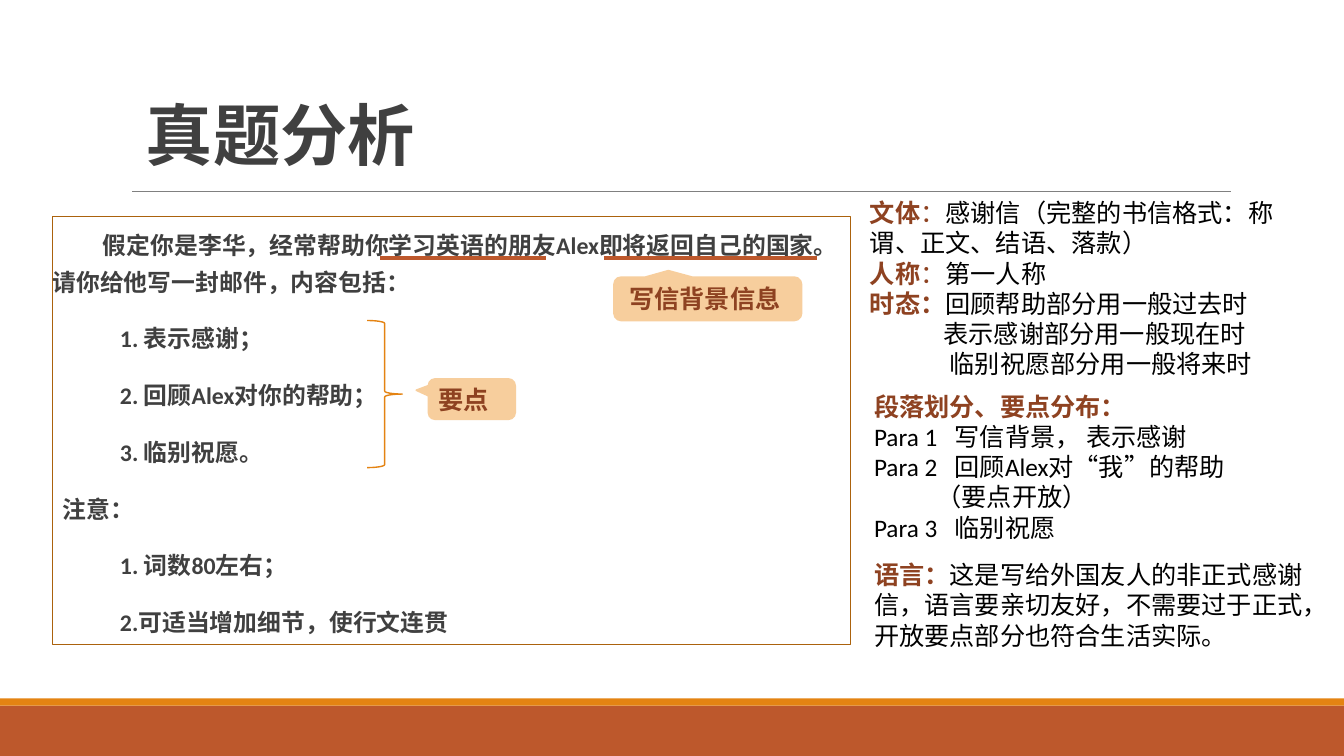
from lxml.etree import SubElement
from pptx import Presentation
from pptx.dml.color import RGBColor
from pptx.enum.shapes import MSO_CONNECTOR, MSO_SHAPE
from pptx.enum.text import MSO_ANCHOR, PP_ALIGN
from pptx.oxml.ns import qn
from pptx.util import Inches, Pt

WHITE = RGBColor(0xFF, 0xFF, 0xFF)
BLACK = RGBColor(0, 0, 0)
DARK = RGBColor(0x40, 0x40, 0x40)
GRAY = RGBColor(0x80, 0x80, 0x80)
RUST = RGBColor(0xBD, 0x58, 0x2C)
ORANGE = RGBColor(0xE4, 0x83, 0x12)
FRAME = RGBColor(0xAB, 0x62, 0x0D)
PEACH = RGBColor(0xF7, 0xCE, 0x9D)
BROWN = RGBColor(0x8E, 0x42, 0x21)

presentation = Presentation()
presentation.slide_width = Inches(13.33)
presentation.slide_height = Inches(7.5)
slide = presentation.slides.add_slide(presentation.slide_layouts[6])
slide.background.fill.solid()
slide.background.fill.fore_color.rgb = WHITE


def add_block(kind, box, fill=None, line=None, width=1):
    shape = slide.shapes.add_shape(kind, *map(Inches, box))
    shape.shadow.inherit = False
    if fill:
        shape.fill.solid()
        shape.fill.fore_color.rgb = fill
    else:
        shape.fill.background()
    if line:
        shape.line.color.rgb = line
        shape.line.width = Pt(width)
    else:
        shape.line.fill.background()
    return shape


def style(paragraph, size, color, bold):
    paragraph.alignment = PP_ALIGN.LEFT
    font = paragraph.font
    font.name, font.size, font.bold = "Calibri", Pt(size), bold
    font.color.rgb = color


add_block(MSO_SHAPE.RECTANGLE, (0, 7, 13.33, 0.5), RUST)
add_block(MSO_SHAPE.RECTANGLE, (0, 6.93, 13.33, 0.07), ORANGE)

title = slide.shapes.add_textbox(Inches(1.35), Inches(0.98), Inches(9.4), Inches(0.8))
title.text_frame.word_wrap = True
title.text_frame.vertical_anchor = MSO_ANCHOR.BOTTOM
title.text_frame.text = "真题分析"
title.text_frame.paragraphs[0].line_spacing = 0.85
style(title.text_frame.paragraphs[0], 48, DARK, True)

task_lines = [
    (0, 0.5, "假定你是李华，经常帮助你学习英语的朋友Alex即将返回自己的国家。请你给他写一封邮件，内容包括："),
    (0.1, 0.57, "1. 表示感谢；"),
    (0.1, 0.57, "2. 回顾Alex对你的帮助；"),
    (0.1, 0.57, "3. 临别祝愿。"),
    (0.1, 0, "注意："),
    (0.1, 0.57, "1. 词数80左右；"),
    (0.1, 0.57, "2.可适当增加细节，使行文连贯"),
]
task = add_block(MSO_SHAPE.RECTANGLE, (0.52, 2.15, 7.92, 4.24), line=FRAME, width=0.75)
frame = task.text_frame
frame.word_wrap = True
frame.vertical_anchor = MSO_ANCHOR.TOP
frame.margin_left = frame.margin_right = 0
frame.text = "\n".join(text for _, _, text in task_lines)
for index, (paragraph, (margin, indent, _)) in enumerate(zip(frame.paragraphs, task_lines)):
    properties = paragraph._p.get_or_add_pPr()
    properties.set("marL", str(Inches(margin)))
    properties.set("indent", str(Inches(indent)))
    paragraph.line_spacing = 1.3
    paragraph.space_before = Pt(12 if index else 0)
    paragraph.space_after = Pt(2)
    style(paragraph, 17, DARK, True)

rules = [(1.31, 12.21, 1.9, GRAY, 0.5), (3.77, 5.42, 2.56, RUST, 2.25), (5.99, 8.1, 2.56, RUST, 2.25)]
for start, end, top, color, width in rules:
    rule = slide.shapes.add_connector(
        MSO_CONNECTOR.STRAIGHT, Inches(start), Inches(top), Inches(end), Inches(top))
    rule.line.color.rgb = color
    rule.line.width = Pt(width)
    SubElement(rule._element.spPr, qn("a:effectLst"))

callouts = [
    ((6.09, 2.75, 1.86, 0.43), (-0.21, -0.65), 0.13, "写信背景信息"),
    ((4.25, 3.76, 0.86, 0.4), (-0.64, -0.22), 0.08, "要点"),
]
for box, tip, inset, text in callouts:
    callout = add_block(MSO_SHAPE.ROUNDED_RECTANGULAR_CALLOUT, box, PEACH, PEACH, 1.25)
    callout.adjustments[0], callout.adjustments[1] = tip
    frame = callout.text_frame
    frame.word_wrap = True
    frame.vertical_anchor = MSO_ANCHOR.MIDDLE
    frame.margin_left = Inches(inset)
    frame.margin_right = frame.margin_top = frame.margin_bottom = 0
    frame.text = text
    style(frame.paragraphs[0], 18, BROWN, True)

add_block(MSO_SHAPE.RIGHT_BRACE, (3.64, 3.18, 0.35, 1.46), line=ORANGE)

notes = [
    ((8.53, 1.91, 4.29, 1.92), [
        (0, "文体", "：", "感谢信（完整的书信格式：称谓、正文、结语、落款）"),
        (0, "人称", "：", "第一人称"),
        (0, "时态：", "", "回顾帮助部分用一般过去时"),
        (0.73, "", "", "表示感谢部分用一般现在时"),
        (0.79, "", "", "临别祝愿部分用一般将来时"),
    ]),
    ((8.57, 3.83, 4.01, 1.62), [
        (0, "段落划分、要点分布：", "", ""),
        (0, "", "", "Para 1\t写信背景， 表示感谢"),
        (0, "", "", "Para 2\t回顾Alex对“我”的帮助"),
        (0.62, "", "", "（要点开放）"),
        (0, "", "", "Para 3\t临别祝愿"),
    ]),
    ((8.57, 5.5, 4.52, 1.01), [
        (0, "语言：", "", "这是写给外国友人的非正式感谢信，语言要亲切友好，不需要过于正式，开放要点部分也符合生活实际。"),
    ]),
]
for box, rows in notes:
    frame = slide.shapes.add_textbox(*map(Inches, box)).text_frame
    frame.word_wrap = True
    for index, (margin, label, colon, text) in enumerate(rows):
        paragraph = frame.add_paragraph() if index else frame.paragraphs[0]
        properties = paragraph._p.get_or_add_pPr()
        properties.set("marL", str(Inches(margin)))
        if "\t" in text:
            tabs = SubElement(properties, qn("a:tabLst"))
            SubElement(tabs, qn("a:tab"), pos=str(Inches(0.8)), algn="l")
        style(paragraph, 18, BLACK, False)
        for words, color, bold in ((label, BROWN, True), (colon, BROWN, False), (text, BLACK, False)):
            if words:
                run = paragraph.add_run()
                run.text = words
                run.font.bold = bold
                run.font.color.rgb = color

presentation.save("out.pptx")
